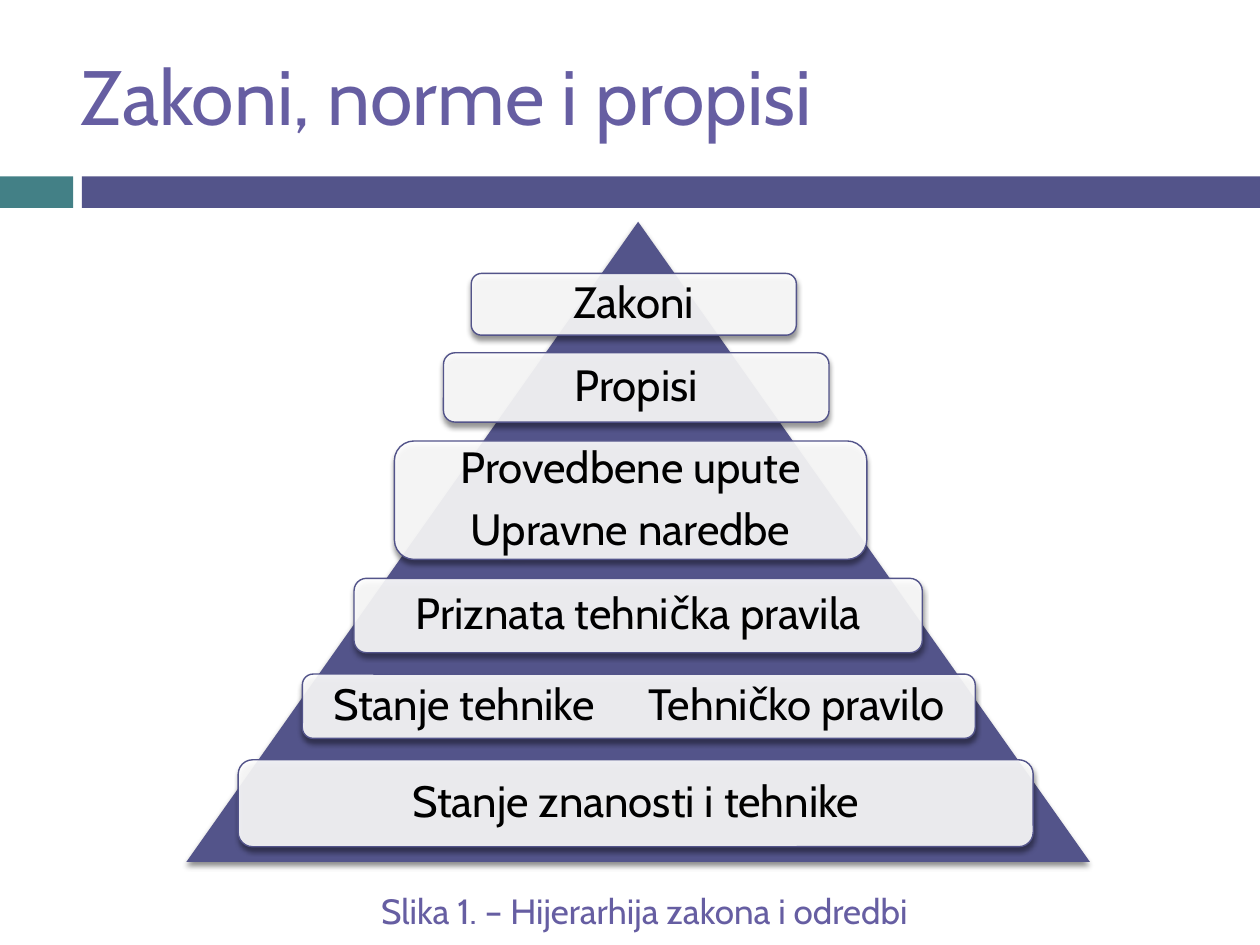
from lxml import etree
from pptx import Presentation
from pptx import util as u
from pptx.dml.color import RGBColor
from pptx.enum import shapes, text
from pptx.oxml.ns import qn

Inches, Pt = u.Inches, u.Pt
FONT = "Cabin"
INDIGO, TEAL, VIOLET, WHITE, BLACK = "53548A", "438086", "665EA2", "FFFFFF", "000000"


def add_block(kind, place, fill, line=None, opacity=None, shadow=False):
    """Add a filled preset shape, optionally outlined, translucent and shadowed."""
    block = page.shapes.add_shape(kind, *map(Inches, place))
    block.shadow.inherit = False
    block.fill.solid()
    block.fill.fore_color.rgb = RGBColor.from_string(fill)
    if line:
        block.line.color.rgb = RGBColor.from_string(line)
        block.line.width = Pt(0.79)
    else:
        block.line.fill.background()
    if opacity:
        color = block.element.spPr.find(qn("a:solidFill")).find(qn("a:srgbClr"))
        etree.SubElement(color, qn("a:alpha"), val=str(opacity * 1000))
    if shadow:
        effects = block.element.spPr.find(qn("a:effectLst"))
        outer = etree.SubElement(effects, qn("a:outerShdw"), blurRad=str(Pt(3)),
                                 dist=str(Pt(2.4)), dir="5400000", rotWithShape="0")
        color = etree.SubElement(outer, qn("a:srgbClr"), val=BLACK)
        etree.SubElement(color, qn("a:alpha"), val="45000")
    return block


def write_text(box, lines, size, color, **paragraph_format):
    frame = box.text_frame
    frame.word_wrap = True
    frame.auto_size = text.MSO_AUTO_SIZE.NONE
    frame.vertical_anchor = text.MSO_ANCHOR.MIDDLE
    for number, line in enumerate(lines):
        para = frame.add_paragraph() if number else frame.paragraphs[0]
        for name, value in paragraph_format.items():
            setattr(para, name, value)
        span = para.add_run()
        span.text = line
        span.font.name = FONT
        span.font.size = Pt(size)
        span.font.color.rgb = RGBColor.from_string(color)
    return frame


deck = Presentation()
deck.slide_width, deck.slide_height = Inches(10), Inches(7.5)
page = deck.slides.add_slide(deck.slide_layouts[5])

# Title and the band below it
title = page.shapes.title
title.left, title.top, title.width, title.height = map(Inches, (0.54, 0.21, 8.92, 1.08))
write_text(title, ["Zakoni, norme i propisi"], 44, VIOLET, alignment=text.PP_ALIGN.LEFT)
for left, width, fill in ((0, 0.58, TEAL), (0.65, 9.35, INDIGO)):
    add_block(shapes.MSO_SHAPE.RECTANGLE, (left, 1.4, width, 0.25), fill)

# Pyramid with its levels from top to bottom
add_block(shapes.MSO_SHAPE.ISOSCELES_TRIANGLE, (1.48, 1.76, 7.17, 5.08), INDIGO, shadow=True)
levels = [
    ((3.74, 2.17, 2.58, 0.49), ["Zakoni"]),
    ((3.52, 2.8, 3.06, 0.55), ["Propisi"]),
    ((3.13, 3.5, 3.75, 0.94), ["Provedbene upute", "Upravne naredbe"]),
    ((2.81, 4.59, 4.51, 0.59), ["Priznata tehnička pravila"]),
    ((2.4, 5.35, 5.34, 0.51), ["Stanje tehnike\tTehničko pravilo"]),
    ((1.89, 6.03, 6.31, 0.69), ["Stanje znanosti i tehnike"]),
]
for place, lines in levels:
    level = add_block(shapes.MSO_SHAPE.ROUNDED_RECTANGLE, place, WHITE,
                      line=INDIGO, opacity=90, shadow=True)
    frame = write_text(level, lines, 25, BLACK, alignment=text.PP_ALIGN.CENTER,
                       line_spacing=0.9, space_after=Pt(8.75))
    for side in ("left", "top", "right", "bottom"):
        setattr(frame, f"margin_{side}", Inches(0.1))

caption = page.shapes.add_textbox(*map(Inches, (1.01, 6.95, 8.21, 0.55)))
write_text(caption, ["Slika 1. – Hijerarhija zakona i odredbi"], 20, VIOLET,
           alignment=text.PP_ALIGN.CENTER)

deck.save("out.pptx")
